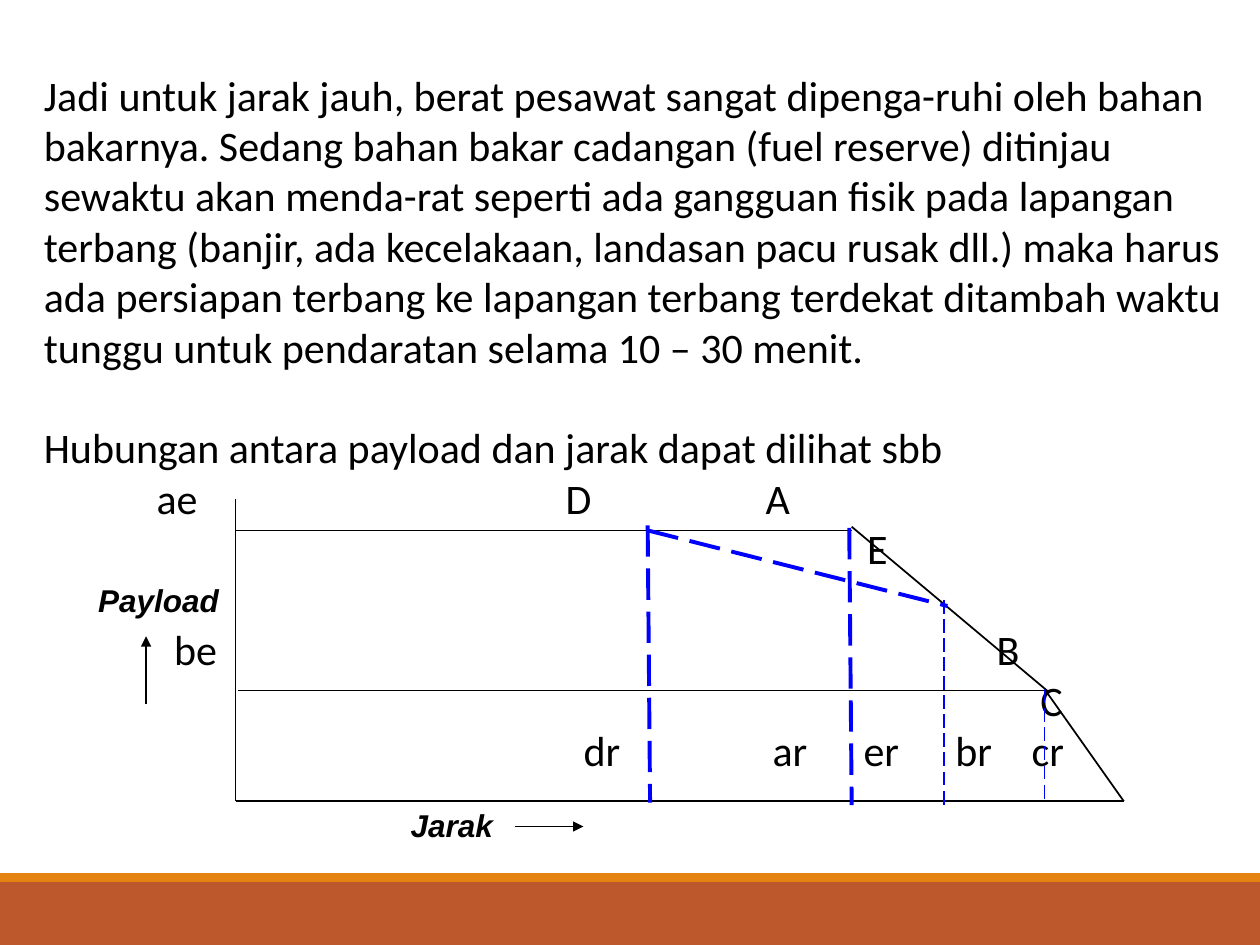
from dataclasses import dataclass

from lxml.etree import SubElement
from pptx import Presentation
from pptx.dml.color import RGBColor
from pptx.enum.dml import MSO_LINE
from pptx.enum.shapes import MSO_CONNECTOR, MSO_SHAPE
from pptx.oxml.ns import qn
from pptx.slide import Slide
from pptx.util import Pt

BLACK = RGBColor(0, 0, 0)
BLUE = RGBColor(0, 0, 255)
RUST = RGBColor(0xBD, 0x58, 0x2C)
ORANGE = RGBColor(0xE4, 0x83, 0x12)

ROW_TOP, ROW_PITCH = 39.6, 28.8
EXPLANATION = (
    "Jadi untuk jarak jauh, berat pesawat sangat dipenga-ruhi oleh bahan bakarnya. "
    "Sedang bahan bakar cadangan (fuel reserve) ditinjau sewaktu akan menda-rat "
    "seperti ada gangguan fisik pada lapangan terbang (banjir, ada kecelakaan, "
    "landasan pacu rusak dll.) maka harus ada persiapan terbang ke lapangan terbang "
    "terdekat ditambah waktu tunggu untuk pendaratan selama 10 – 30 menit."
)
CHART_INTRO = "Hubungan antara payload dan jarak dapat dilihat sbb"
POINT_LABELS = {
    8: [("ae", 89.5), ("D", 323.3), ("A", 437.5)],
    9: [("E", 495.5)],
    11: [("be", 99.5), ("B", 569.5)],
    12: [("C", 594.5)],
    13: [("dr", 333.5), ("ar", 441.5), ("er", 493.5), ("br", 546), ("cr", 589.5)],
}
AXES_AND_ENVELOPE = [
    (134.6, 285.1, 134.6, 457.9),
    (134.6, 457.9, 642.2, 457.9),
    (136.1, 394.6, 601.9, 394.6),
    (134.6, 303.1, 486.7, 303.1),
    (486.7, 301, 598.3, 394.6),
    (596.9, 393.8, 642.2, 457.9),
]
RANGE_MARKS = [
    (596.9, 393.8, 596.9, 456.5, 1),
    (539.3, 342.7, 539.3, 460.1, 1),
    (485.3, 301.7, 486.7, 460.1, 2.25),
    (370.1, 300.2, 371.5, 458.6, 2.25),
    (370.1, 303.1, 541.4, 346.3, 2.25),
]
DIRECTION_ARROWS = [(294.5, 472.3, 333.4, 472.3), (83.5, 402.5, 83.5, 363.6)]


def write(paragraph, text, font="Calibri", size=24, color=BLACK, bold=False, italic=False):
    """Add formatted text to a paragraph."""
    run = paragraph.add_run()
    run.text = text
    run.font.name = font
    run.font.size = Pt(size)
    run.font.color.rgb = color
    run.font.bold = bold
    run.font.italic = italic


@dataclass
class Painter:
    """Hold the slide and its line style."""

    slide: Slide
    line_color: RGBColor = BLACK
    line_width: float = 1

    def band(self, top, height, color):
        """Draw a full-width band."""
        band = self.slide.shapes.add_shape(
            MSO_SHAPE.RECTANGLE, Pt(0), Pt(top), Pt(720), Pt(height))
        band.shadow.inherit = False
        band.fill.solid()
        band.fill.fore_color.rgb = color
        band.line.fill.background()

    def text(self, left, top, width, height, *paragraphs, wrap=False,
             margins=(0, 0), gap=0, **style):
        """Place paragraphs with a gap between them."""
        frame = self.slide.shapes.add_textbox(
            Pt(left), Pt(top), Pt(width), Pt(height)).text_frame
        frame.word_wrap = wrap
        frame.margin_left = frame.margin_right = Pt(margins[0])
        frame.margin_top = frame.margin_bottom = Pt(margins[1])
        for index, content in enumerate(paragraphs):
            paragraph = frame.add_paragraph() if index else frame.paragraphs[0]
            paragraph.space_before = Pt(gap if index else 0)
            write(paragraph, content, **style)

    def line(self, x1, y1, x2, y2, width=None, color=None, dashed=False, arrow=False):
        """Draw a straight line."""
        line = self.slide.shapes.add_connector(
            MSO_CONNECTOR.STRAIGHT, Pt(x1), Pt(y1), Pt(x2), Pt(y2))
        line.line.color.rgb = color or self.line_color
        line.line.width = Pt(width or self.line_width)
        if dashed:
            line.line.dash_style = MSO_LINE.LONG_DASH
        properties = line._element.spPr
        if arrow:
            SubElement(properties.find(qn("a:ln")), qn("a:tailEnd"), type="triangle")
        SubElement(properties, qn("a:effectLst"))


def main():
    """Build the payload and range slide."""
    deck = Presentation()
    deck.slide_width, deck.slide_height = Pt(720), Pt(540)
    painter = Painter(deck.slides.add_slide(deck.slide_layouts[6]))

    painter.band(504, 36, RUST)
    painter.band(499, 5, ORANGE)
    painter.text(18, 36, 690, 238, EXPLANATION, CHART_INTRO,
                 wrap=True, margins=(7.2, 3.6), gap=ROW_PITCH)
    for row, labels in POINT_LABELS.items():
        for label, left in labels:
            painter.text(left, ROW_TOP + row * ROW_PITCH, 30, ROW_PITCH, label)

    for segment in AXES_AND_ENVELOPE:
        painter.line(*segment)
    for mark in RANGE_MARKS:
        painter.line(*mark, color=BLUE, dashed=True)
    for title, left, top, width in [("Payload", 49, 328.3, 83.5), ("Jarak", 227.5, 457.2, 61.2)]:
        painter.text(left, top, width, 28.8, title, margins=(7.2, 3.6),
                     font="Arial", size=18, bold=True, italic=True)
    for arrow in DIRECTION_ARROWS:
        painter.line(*arrow, arrow=True)

    deck.save("out.pptx")


if __name__ == "__main__":
    main()
